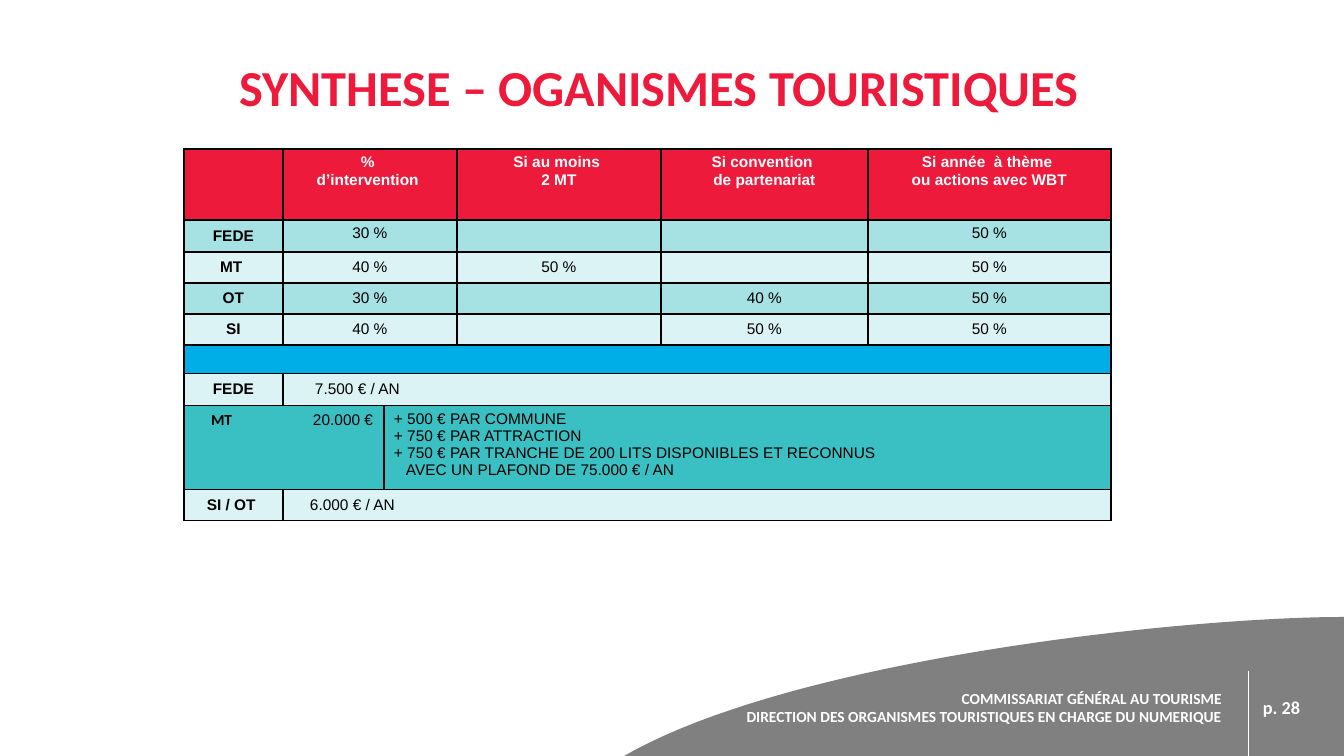
from lxml import etree
from pptx import Presentation
from pptx.dml.color import RGBColor
from pptx.enum.shapes import MSO_CONNECTOR
from pptx.enum.text import MSO_ANCHOR, PP_ALIGN
from pptx.oxml.ns import qn
from pptx.util import Pt

TOP, MIDDLE, BOTTOM = MSO_ANCHOR.TOP, MSO_ANCHOR.MIDDLE, MSO_ANCHOR.BOTTOM
LEFT, CENTER, RIGHT = PP_ALIGN.LEFT, PP_ALIGN.CENTER, PP_ALIGN.RIGHT
STRAIGHT = MSO_CONNECTOR.STRAIGHT
EMU_PER_PX = 914400 / 100.8

COLORS = {
    "red": "ED1A3B", "white": "FFFFFF", "black": "000000", "gray": "808080",
    "aqua": "A6E2E3", "pale": "DBF3F4", "blue": "00AEE7", "teal": "3ABFC2",
}
FONTS = {
    "title": {"name": "Calibri", "size": Pt(36), "bold": True, "color": "red"},
    "footer": {"name": "Calibri", "size": Pt(11), "bold": True, "color": "white"},
    "page": {"name": "Calibri", "size": Pt(13), "bold": True, "color": "white"},
    "head": {"name": "Arial", "size": Pt(11), "bold": True, "color": "white"},
    "label": {"name": "Arial", "size": Pt(11), "bold": True, "color": "black"},
    "value": {"name": "Arial", "size": Pt(11), "bold": False, "color": "black"},
    "small label": {"name": "Calibri", "size": Pt(11), "bold": True, "color": "black"},
}
CELLS = {
    "head": ("head", CENTER, TOP, 10),
    "label": ("label", CENTER, MIDDLE, 10),
    "value": ("value", CENTER, MIDDLE, 10),
    "top value": ("value", CENTER, TOP, 10),
    "federation": ("value", LEFT, MIDDLE, 32),
    "offices": ("value", LEFT, MIDDLE, 27),
    "base": ("small label", LEFT, TOP, 27),
    "extras": ("value", LEFT, TOP, 10),
}
COLUMN_WIDTHS = [99, 101, 73, 204, 207, 243]
PLAFOND_INDENT, BASE_TAB = 12, 102


def rate_row(height, fill, label, rates, kind="value"):
    """Describe a row with a label and four intervention rates."""
    cells = [(1, [label], "label")]
    cells += [(span, [rate], kind) for span, rate in zip((2, 1, 1, 1), rates)]
    return height, fill, cells


ROWS = [
    (71, "red", [
        (1, [""], "head"),
        (2, ["% ", "d’intervention "], "head"),
        (1, ["Si au moins ", "2 MT"], "head"),
        (1, ["Si convention ", "de partenariat"], "head"),
        (1, ["Si année  à thème ", "ou actions avec WBT"], "head")]),
    rate_row(32, "aqua", "FEDE", ["30 %", "", "", "50 %"], "top value"),
    rate_row(31, "pale", "MT ", ["40 %", "50 %", "", "50 %"]),
    rate_row(31, "aqua", "OT", ["30 %", "", "40 %", "50 %"]),
    rate_row(31, "pale", "SI", ["40 %", "", "50 %", "50 %"]),
    (27, "blue", [(6, [""], "value")]),
    (32, "pale", [(1, ["FEDE"], "label"), (5, ["7.500 € / AN"], "federation")]),
    (82, "teal", [
        (2, [[("MT", "small label"), ("\t20.000 €", "value")]], "base"),
        (4, ["+ 500 € PAR COMMUNE", "+ 750 € PAR ATTRACTION",
             "+ 750 € PAR TRANCHE DE 200 LITS DISPONIBLES ET RECONNUS",
             "AVEC UN PLAFOND DE 75.000 € / AN"], "extras")]),
    (31, "pale", [(1, ["SI / OT "], "label"), (5, ["6.000 € / AN"], "offices")]),
]


def px(*lengths):
    """Turn pixel lengths into EMU."""
    return [round(length * EMU_PER_PX) for length in lengths]


def rgb(color):
    """Return the named colour."""
    return RGBColor.from_string(COLORS[color])


def write(frame, lines, font, align):
    """Write lines, each a string or a list of (text, font) runs."""
    for number, line in enumerate(lines):
        paragraph = frame.add_paragraph() if number else frame.paragraphs[0]
        paragraph.alignment = align
        runs = [(line, font)] if isinstance(line, str) else line
        for text, run_font in runs:
            look = FONTS[run_font]
            if not text:
                end = etree.SubElement(paragraph._p, qn("a:endParaRPr"))
                end.set("sz", str(round(look["size"].pt * 100)))
                continue
            run = paragraph.add_run()
            run.text = text
            for key in ("name", "size", "bold"):
                setattr(run.font, key, look[key])
            run.font.color.rgb = rgb(look["color"])


def add_text(slide, box, lines, font, align, anchor):
    """Add a wrapped text box."""
    frame = slide.shapes.add_textbox(*px(*box)).text_frame
    frame.word_wrap = True
    frame.vertical_anchor = anchor
    write(frame, lines, font, align)
    return frame


def add_title(slide, box):
    """Add the slide title."""
    frame = add_text(slide, box, ["SYNTHESE – OGANISMES TOURISTIQUES "], "title", CENTER, BOTTOM)
    frame.paragraphs[0].line_spacing = 0.9


def add_footer(slide, box):
    """Add the curved band with the department and page number."""
    left, top, width, height = box
    right, bottom = left + width, top + height
    controls = [(left, bottom), (left + 170, top + 41), (right - 157, top), (right, top)]
    curve = []
    for step in range(41):
        t = step / 40
        weights = ((1 - t) ** 3, 3 * t * (1 - t) ** 2, 3 * t * t * (1 - t), t ** 3)
        curve.append(tuple(px(*(sum(w * point[axis] for w, point in zip(weights, controls))
                                for axis in (0, 1)))))
    builder = slide.shapes.build_freeform(*curve[0])
    builder.add_line_segments(curve[1:] + [tuple(px(right, bottom))])
    band = builder.convert_to_shape()
    band.shadow.inherit = False
    band.fill.solid()
    band.fill.fore_color.rgb = rgb("gray")
    band.line.fill.background()

    text_top = top + 54
    add_text(slide, (left + 59, text_top, 549, 73),
             ["COMMISSARIAT GÉNÉRAL AU TOURISME",
              "DIRECTION DES ORGANISMES TOURISTIQUES EN CHARGE DU NUMERIQUE"],
             "footer", RIGHT, MIDDLE)
    add_text(slide, (right - 91, text_top, 66, 73), ["p. 28"], "page", LEFT, MIDDLE)
    divider = slide.shapes.add_connector(
        STRAIGHT, *px(right - 96, text_top, right - 96, bottom))
    divider.line.color.rgb = rgb("white")
    divider.line.width = Pt(0.5)
    etree.SubElement(divider._element.spPr, qn("a:effectLst"))


def style_cell(cell, fill):
    """Give a cell black borders and a plain fill."""
    properties = cell._tc.get_or_add_tcPr()
    for side in ("a:lnL", "a:lnR", "a:lnT", "a:lnB"):
        border = etree.SubElement(properties, qn(side), w=str(Pt(1)))
        solid = etree.SubElement(border, qn("a:solidFill"))
        etree.SubElement(solid, qn("a:srgbClr"), val=COLORS["black"])
    cell.fill.solid()
    cell.fill.fore_color.rgb = rgb(fill)


def add_rates_table(slide, left, top):
    """Add the table of rates and yearly amounts."""
    size = sum(COLUMN_WIDTHS), sum(row[0] for row in ROWS)
    table = slide.shapes.add_table(
        len(ROWS), len(COLUMN_WIDTHS), *px(left, top, *size)).table
    table.first_row = table.horz_banding = False
    for column, width in zip(table.columns, px(*COLUMN_WIDTHS)):
        column.width = width
    for row, (height, fill, cells) in enumerate(ROWS):
        table.rows[row].height = px(height)[0]
        for cell in table.rows[row].cells:
            style_cell(cell, fill)
        column = 0
        for span, lines, kind in cells:
            font, align, anchor, margin = CELLS[kind]
            cell = table.cell(row, column)
            if span > 1:
                cell.merge(table.cell(row, column + span - 1))
            cell.vertical_anchor = anchor
            cell.margin_left = px(margin)[0]
            write(cell.text_frame, lines, font, align)
            last = cell.text_frame.paragraphs[-1]._p.get_or_add_pPr()
            if kind == "extras":
                last.set("marL", str(px(PLAFOND_INDENT)[0]))
            elif kind == "base":
                tabs = etree.SubElement(last, qn("a:tabLst"))
                etree.SubElement(tabs, qn("a:tab"), pos=str(px(BASE_TAB)[0]), algn="l")
            column += span


def main():
    """Build and save the slide."""
    deck = Presentation()
    deck.slide_width, deck.slide_height = px(1344, 756)
    slide = deck.slides.add_slide(deck.slide_layouts[6])
    add_footer(slide, (624, 617, 720, 139))
    add_title(slide, (161, 46, 1008, 76))
    add_rates_table(slide, 184, 149)
    deck.save("out.pptx")


if __name__ == "__main__":
    main()
